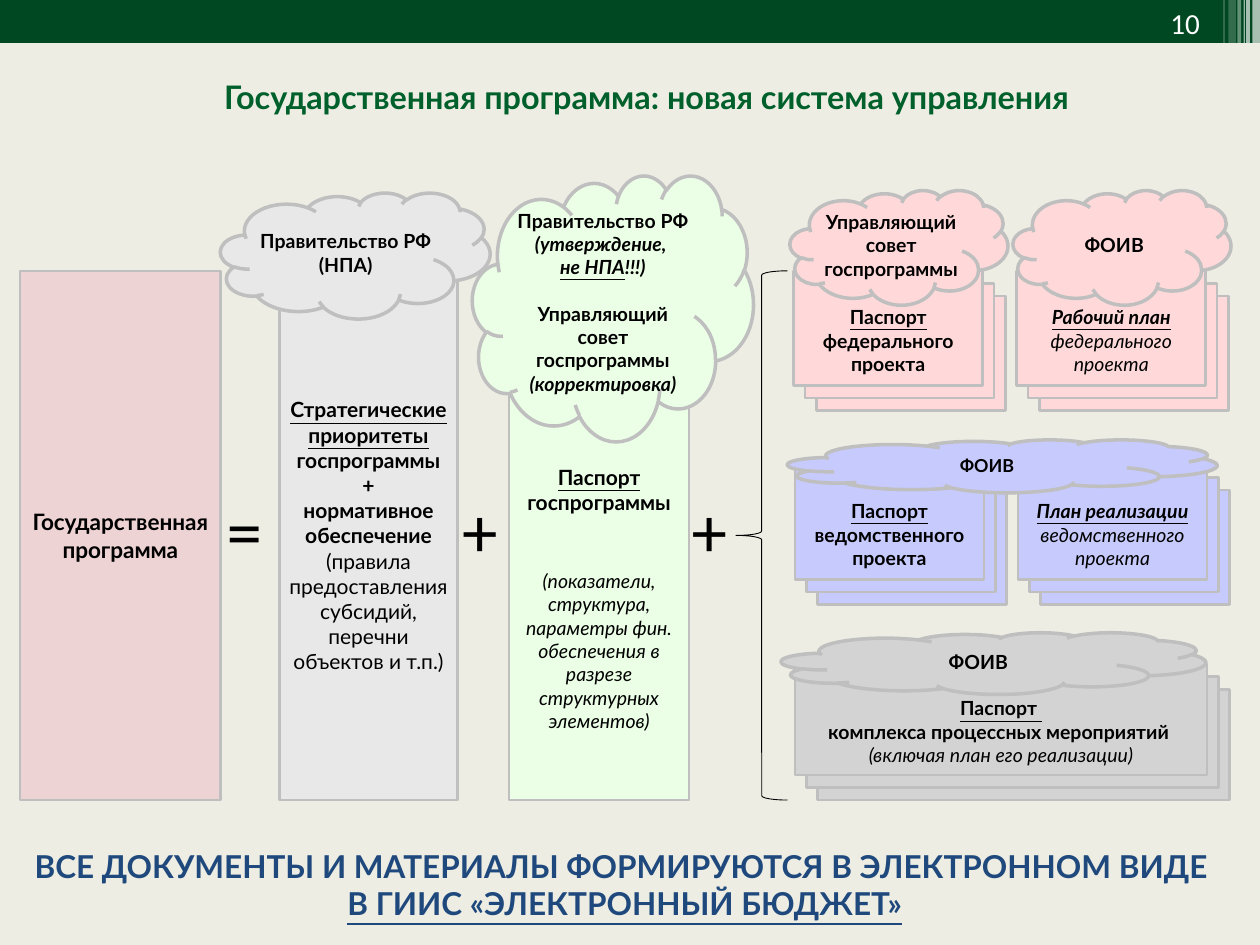
from lxml import etree
from pptx import Presentation
from pptx.dml.color import RGBColor
from pptx.enum.shapes import MSO_SHAPE
from pptx.enum.text import MSO_ANCHOR, PP_ALIGN
from pptx.oxml.ns import qn
from pptx.util import Inches, Pt

RECT = MSO_SHAPE.RECTANGLE
CLOUD = MSO_SHAPE.CLOUD
BRACE = MSO_SHAPE.LEFT_BRACE
MIDDLE, TOP = MSO_ANCHOR.MIDDLE, MSO_ANCHOR.TOP
LEFT, CENTER, RIGHT = PP_ALIGN.LEFT, PP_ALIGN.CENTER, PP_ALIGN.RIGHT

PAPER, DARK, GREEN, NAVY = "EDEDE3", "004821", "00602B", "1F497D"
ROSE, SILVER, MINT = "EDD3D3", "E8E8E8", "EBFEE6"
PINK, LILAC, GRAY, EDGE = "FFD9D9", "C7CAFD", "D3D3D3", "BFBFBF"
BLACK, WHITE = "000000", "FFFFFF"


def paint(fmt, color):
    """Give a fill or a line one solid colour."""
    fmt.solid()
    fmt.fore_color.rgb = RGBColor.from_string(color)


def write(shape, paras, size=11.1, font="Lato", color=BLACK, align=CENTER,
          anchor=MIDDLE, sides=0.1, top=0.05, gaps=None, pitch=None):
    """Fill a shape with paragraphs, each a list of (text, style[, size]).

    Style letters are b, i and u; gaps maps paragraph index to space before.
    """
    frame = shape.text_frame
    frame.word_wrap = True
    frame.vertical_anchor = anchor
    frame.margin_left = frame.margin_right = Inches(sides)
    frame.margin_top, frame.margin_bottom = Inches(top), Inches(0.05)
    for num, runs in enumerate(paras):
        para = frame.paragraphs[0] if num == 0 else frame.add_paragraph()
        para.alignment = align
        if pitch:
            para.line_spacing = pitch
        if gaps and num in gaps:
            para.space_before = Pt(gaps[num])
        for text, style, *own in runs:
            for row, part in enumerate(text.split("\n")):
                if row:
                    para.add_line_break()
                if not part:
                    continue
                run = para.add_run()
                run.text = part
                run.font.name = font
                run.font.size = Pt(own[0] if own else size)
                run.font.bold = "b" in style
                run.font.italic = "i" in style
                run.font.underline = "u" in style
                run.font.color.rgb = RGBColor.from_string(color)


def draw(slide, kind, x, y, w, h, fill=None, line=None, width=1.5, alpha=None):
    """Add a preset shape without shadow."""
    shape = slide.shapes.add_shape(kind, Inches(x), Inches(y), Inches(w), Inches(h))
    shape.shadow.inherit = False
    if fill:
        paint(shape.fill, fill)
    else:
        shape.fill.background()
    if line:
        paint(shape.line.fill, line)
        shape.line.width = Pt(width)
    else:
        shape.line.fill.background()
    if alpha:
        tone = shape.fill._xPr.find(qn("a:solidFill"))[0]
        etree.SubElement(tone, qn("a:alpha"), val=str(alpha * 1000))
    return shape


def label(slide, x, y, w, h, paras, **style):
    box = slide.shapes.add_textbox(Inches(x), Inches(y), Inches(w), Inches(h))
    write(box, paras, **style)


def pillar(slide, x, w, fill, paras, **style):
    shape = draw(slide, RECT, x, 2.15, w, 4.2, fill, EDGE)
    write(shape, paras, sides=0.04, **style)


def stack(slide, x, y, w, h, fill, runs):
    """Three offset cards, with text on the front one."""
    for step in (2, 1, 0):
        card = draw(slide, RECT, x + 0.09 * step, y + 0.1 * step, w, h, fill, EDGE)
    write(card, [runs], sides=0.04, top=0.24)


def cloud(slide, x, y, w, h, fill, paras, **style):
    shape = draw(slide, CLOUD, x, y, w, h, fill, EDGE, 2)
    write(shape, paras, sides=0, **style)


def header(slide):
    draw(slide, RECT, 0, 0, 10, 0.34, DARK)
    stripes = [(9.94, 0.06, 65), (9.89, 0.03, 65), (9.87, 0.01, 60),
               (9.82, 0.03, 40), (9.75, 0.06, 20), (9.71, 0.01, 30)]
    for x, w, alpha in stripes:
        draw(slide, RECT, x, 0, w, 0.34, WHITE, alpha=alpha)
    label(slide, 7.29, -0.02, 2.33, 0.4, [[("10", "")]], size=16.6,
          font="Calibri", color=WHITE, align=RIGHT)
    label(slide, 1.05, 0.61, 8.16, 0.36,
          [[("Государственная программа: новая система управления", "b")]],
          size=18.5, color=GREEN, pitch=0.85)


def main():
    deck = Presentation()
    deck.slide_width, deck.slide_height = Inches(10), Inches(7.5)
    slide = deck.slides.add_slide(deck.slide_layouts[6])
    paint(slide.background.fill, PAPER)
    header(slide)

    # Pillars of the equation
    pillar(slide, 0.16, 1.59, ROSE, [[("Государственная программа", "b")]], size=12.9)
    pillar(slide, 2.22, 1.41, SILVER, [
        [("Стратегические приоритеты ", "bu"), ("госпрограммы", "b")],
        [("+", "b")],
        [("нормативное обеспечение ", "b"),
         ("(правила предоставления субсидий, перечни объектов и т.п.)", "")],
    ], size=12)
    pillar(slide, 4.04, 1.43, MINT, [
        [("Паспорт", "bu"), (" госпрограммы", "b")],
        [("(показатели, структура, параметры фин. обеспечения "
          "в разрезе структурных элементов)", "i", 11.1)],
    ], size=12, top=1.05, gaps={1: 31})

    # Signs and brace
    for x, sign in ((1.7, "="), (3.57, "+"), (5.39, "+")):
        label(slide, x, 3.81, 0.63, 0.78, [[(sign, "")]], size=40.6,
              font="Calibri", align=LEFT, anchor=TOP)
    draw(slide, BRACE, 5.84, 2.15, 0.41, 4.2, line=BLACK, width=0.5)

    # Card stacks
    rows = [(6.3, 2.15, PINK, "Рабочий план ", "федерального проекта"),
            (6.31, 3.69, LILAC, "План реализации ", "ведомственного проекта")]
    for x, y, fill, plan, item in rows:
        stack(slide, x, y, 1.5, 0.91, fill, [("Паспорт ", "bu"), (item, "b")])
        stack(slide, x + 1.77, y, 1.5, 0.91, fill, [(plan, "biu"), (item, "i")])
    stack(slide, 6.31, 5.27, 3.27, 0.88, GRAY, [
        ("Паспорт \n", "bu"), ("комплекса процессных мероприятий \n", "b"),
        ("(включая план его реализации)", "i")])

    # Clouds with the responsible bodies
    state = [("Правительство РФ", "b")]
    board = [("Управляющий совет госпрограммы", "b")]
    agency = [("ФОИВ", "b")]
    cloud(slide, 1.75, 1.53, 2.14, 1, SILVER, [state, [("(НПА)", "b")]])
    cloud(slide, 3.75, 1.39, 2.23, 2.11, MINT, [
        state,
        [("(утверждение, \n", "bi"), ("не НПА", "biu"), ("!!!)", "bi")],
        board,
        [("(корректировка)", "bi")],
    ], gaps={2: 13.3})
    cloud(slide, 6.27, 1.51, 1.73, 0.91, PINK, [board])
    cloud(slide, 8.04, 1.51, 1.73, 0.91, PINK, [agency])
    cloud(slide, 6.25, 3.49, 3.41, 0.42, LILAC, [agency], size=10.2)
    cloud(slide, 6.2, 5.02, 3.37, 0.49, GRAY, [agency])

    # Closing statement
    label(slide, 0.16, 6.67, 9.6, 0.71, [[
        ("ВСЕ ДОКУМЕНТЫ И МАТЕРИАЛЫ ФОРМИРУЮТСЯ В ЭЛЕКТРОННОМ ВИДЕ \n", "b"),
        ("В ГИИС «ЭЛЕКТРОННЫЙ БЮДЖЕТ»", "bu")]],
        size=18, color=NAVY, anchor=TOP)

    deck.save("out.pptx")


if __name__ == "__main__":
    main()
